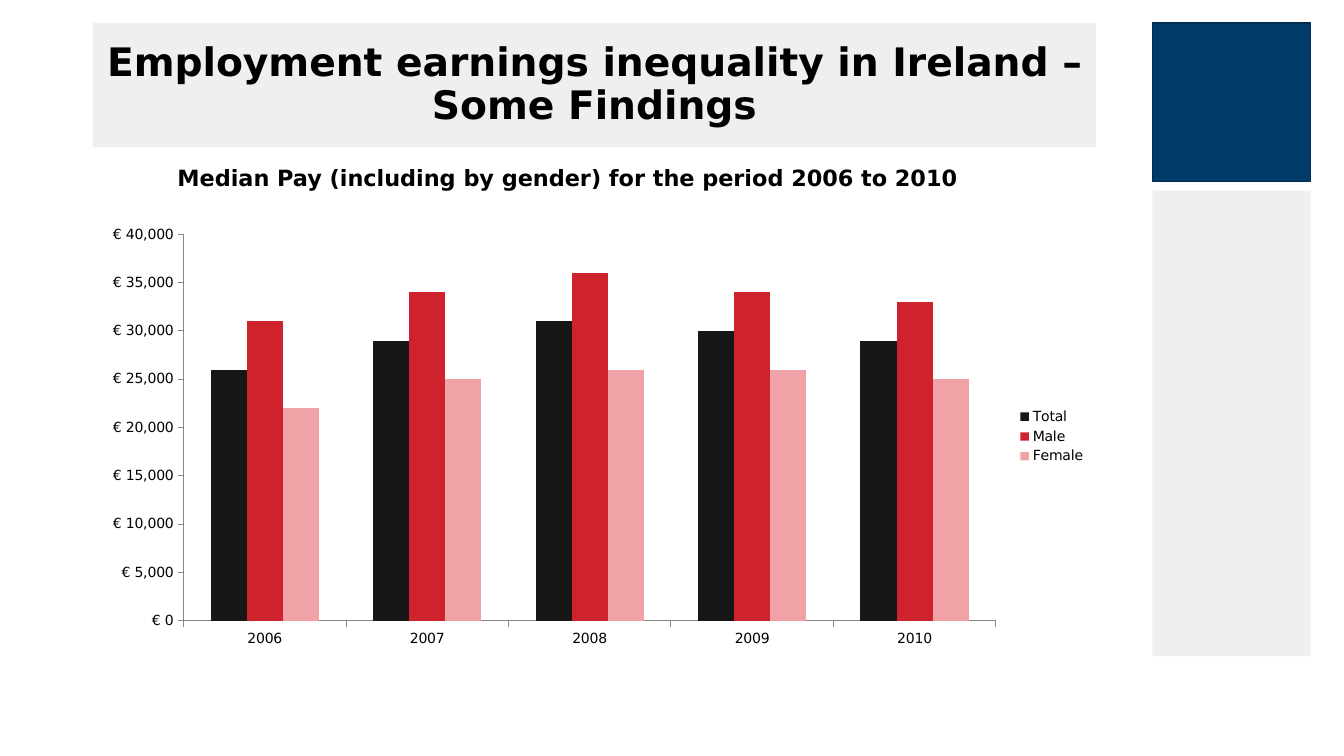
from pptx import Presentation
from pptx.chart.data import CategoryChartData
from pptx.dml.color import RGBColor
from pptx.enum.chart import XL_CHART_TYPE, XL_LEGEND_POSITION, XL_TICK_MARK
from pptx.enum.shapes import MSO_SHAPE
from pptx.enum.text import MSO_ANCHOR, MSO_AUTO_SIZE, PP_ALIGN
from pptx.util import Inches, Pt

FONT = "DejaVu Sans"
EURO_FORMAT = r"[$€-2]\ #,##0;[Red]\-[$€-2]\ #,##0"
PALE_GREY = "EFEFF0"


def paint(color_format, color):
    color_format.rgb = RGBColor.from_string(color)


def style_font(font, size, bold=False):
    font.name = FONT
    font.size = Pt(size)
    font.bold = bold
    paint(font.color, "000000")


presentation = Presentation()
presentation.slide_width = Inches(13.33)
presentation.slide_height = Inches(7.5)
slide = presentation.slides.add_slide(presentation.slide_layouts[5])

# Side panels: colour, outline, top, height
for color, outline, top, height in [
    (PALE_GREY, None, 1.89, 4.62),
    ("003C69", "002C4E", 0.23, 1.57),
]:
    panel = slide.shapes.add_shape(
        MSO_SHAPE.RECTANGLE, Inches(11.43), Inches(top), Inches(1.57), Inches(height))
    panel.shadow.inherit = False
    panel.fill.solid()
    paint(panel.fill.fore_color, color)
    if outline:
        paint(panel.line.color, outline)
        panel.line.width = Pt(1)
    else:
        panel.line.fill.background()

# Title band
title = slide.shapes.title
title.left, title.top = Inches(0.92), Inches(0.23)
title.width, title.height = Inches(9.95), Inches(1.23)
title.fill.solid()
paint(title.fill.fore_color, PALE_GREY)
title.text_frame.text = "Employment earnings inequality in Ireland – Some Findings"
title.text_frame.word_wrap = True
title.text_frame.auto_size = MSO_AUTO_SIZE.NONE
title.text_frame.vertical_anchor = MSO_ANCHOR.MIDDLE
headline = title.text_frame.paragraphs[0]
headline.alignment = PP_ALIGN.CENTER
headline.line_spacing = 0.9
style_font(headline.font, 28, bold=True)

# Chart heading
heading = slide.shapes.add_textbox(
    Inches(1.38), Inches(1.58), Inches(8.5), Inches(0.37)).text_frame
heading.word_wrap = True
heading.auto_size = MSO_AUTO_SIZE.SHAPE_TO_FIT_TEXT
heading.text = "Median Pay (including by gender) for the period 2006 to 2010"
heading.paragraphs[0].alignment = PP_ALIGN.CENTER
style_font(heading.paragraphs[0].font, 16, bold=True)

# Median pay chart
median_pay = [
    ("Total", "181717", (26000, 29000, 31000, 30000, 29000)),
    ("Male", "CE222C", (31000, 34000, 36000, 34000, 33000)),
    ("Female", "F0A2A7", (22000, 25000, 26000, 26000, 25000)),
]
pay_data = CategoryChartData(number_format=EURO_FORMAT)
pay_data.categories = [str(year) for year in range(2006, 2011)]
for group, _, pay in median_pay:
    pay_data.add_series(group, pay)
chart = slide.shapes.add_chart(
    XL_CHART_TYPE.COLUMN_CLUSTERED, Inches(0.92), Inches(2.16),
    Inches(9.95), Inches(4.34), pay_data).chart
style_font(chart.font, 10)
chart.has_title = False
chart.has_legend = True
chart.legend.position = XL_LEGEND_POSITION.RIGHT
chart.legend.include_in_layout = False

columns = chart.plots[0]
columns.gap_width = 150
columns.overlap = 0
columns.vary_by_categories = False
for series, (_, color, _) in zip(columns.series, median_pay):
    series.format.fill.solid()
    paint(series.format.fill.fore_color, color)

# Axes
for axis in (chart.category_axis, chart.value_axis):
    axis.has_major_gridlines = False
    axis.major_tick_mark = XL_TICK_MARK.OUTSIDE
    axis.minor_tick_mark = XL_TICK_MARK.NONE
    axis.format.line.width = Pt(0.75)
    paint(axis.format.line.color, "868686")
pay_axis = chart.value_axis
pay_axis.minimum_scale = 0
pay_axis.maximum_scale = 40000
pay_axis.major_unit = 5000
pay_axis.tick_labels.number_format = EURO_FORMAT
pay_axis.tick_labels.number_format_is_linked = False

presentation.save("out.pptx")
